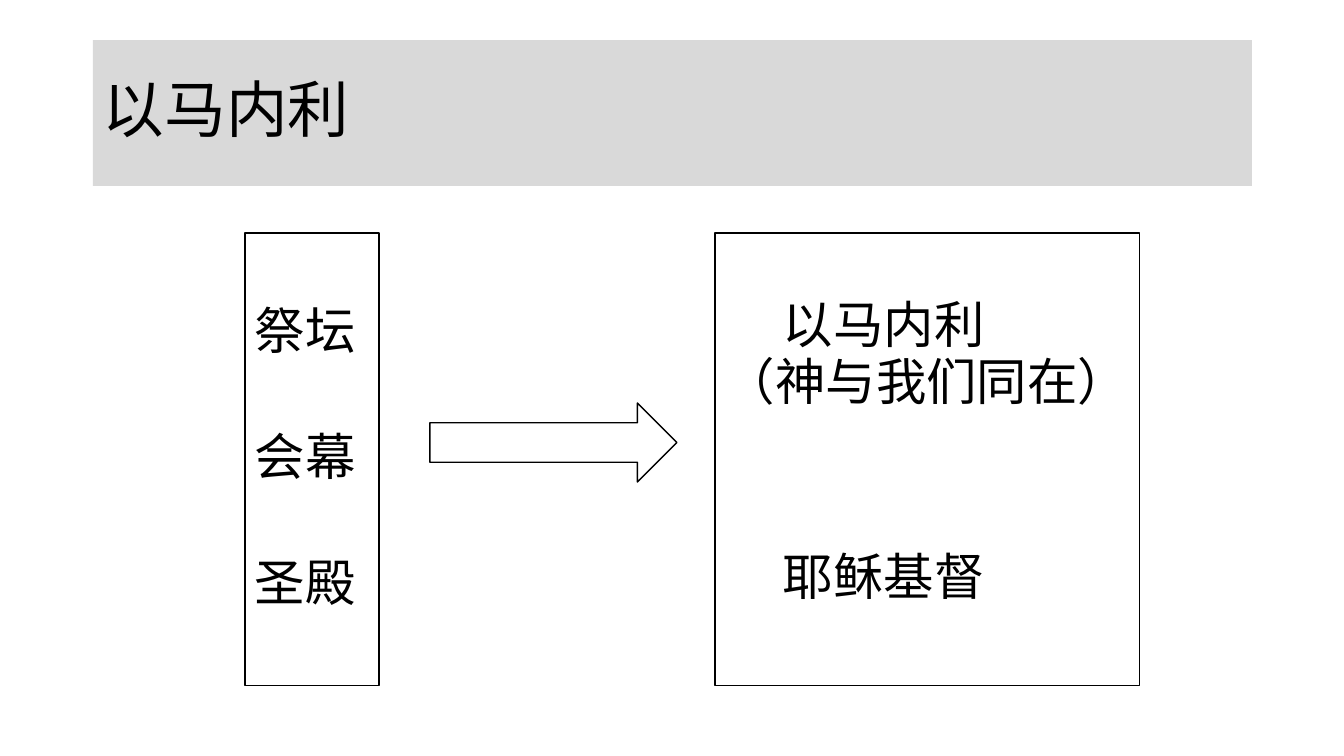
from pptx import Presentation
from pptx import util as u
from pptx.dml.color import RGBColor
from pptx.enum import shapes, text

PX = 914400 / 100.8
FONT = "Noto Sans CJK SC"
HUES = {"ink": "000000", "band": "D9D9D9", "white": "FFFFFF"}


def px(n):
    """Turn pixels into EMU."""
    return u.Emu(round(n * PX))


def hue(name):
    """Look up a colour."""
    return RGBColor.from_string(HUES[name])


def block(slide, kind, area, fill=None, line=None):
    """Add a preset shape with an optional fill and outline."""
    shape = slide.shapes.add_shape(kind, *map(px, area))
    shape.shadow.inherit = False
    if fill:
        shape.fill.solid()
        shape.fill.fore_color.rgb = hue(fill)
    else:
        shape.fill.background()
    if line:
        shape.line.color.rgb = hue("ink")
        shape.line.width = u.Pt(line)
    else:
        shape.line.fill.background()
    return shape


def write(shape, rows, size, top=5, anchor=text.MSO_ANCHOR.TOP):
    """Write rows of (words, space before in pt, indent in px)."""
    frame = shape.text_frame
    frame.word_wrap = True
    frame.vertical_anchor = anchor
    frame.margin_top = px(top)
    for i, (words, gap, indent) in enumerate(rows):
        para = frame.add_paragraph() if i else frame.paragraphs[0]
        para.alignment = text.PP_ALIGN.LEFT
        para.line_spacing = 0.9
        para.space_before = u.Pt(gap)
        if indent:
            para._p.get_or_add_pPr().set("marL", str(px(indent)))
        run = para.add_run()
        run.text = words
        run.font.size = u.Pt(size)
        run.font.color.rgb = hue("ink")
        run.font.name = FONT
        east = run._r.get_or_add_rPr().makeelement(
            "{http://schemas.openxmlformats.org/drawingml/2006/main}ea",
            {"typeface": FONT})
        run.font._element.append(east)


def main():
    """Build the slide."""
    deck = Presentation()
    deck.slide_width, deck.slide_height = px(1344), px(756)
    slide = deck.slides.add_slide(deck.slide_layouts[6])
    kinds = shapes.MSO_SHAPE

    title = block(slide, kinds.RECTANGLE, (93, 40, 1159, 146), fill="band")
    write(title, [("以马内利", 0, 0)], 44, anchor=text.MSO_ANCHOR.MIDDLE)

    places = block(slide, kinds.RECTANGLE, (245, 233, 134, 453), line=0.75)
    write(places, [("祭坛", 0, 0), ("会幕", 51, 0), ("圣殿", 51, 0)], 36, top=73)

    christ = block(slide, kinds.RECTANGLE, (715, 233, 425, 453), line=0.75)
    write(christ, [("以马内利", 0, 58), ("（神与我们同在）", 2, 0),
                   ("耶稣基督", 100, 58)], 36, top=67)

    block(slide, kinds.RIGHT_ARROW, (430, 403, 247, 79), fill="white", line=1)
    deck.save("out.pptx")


if __name__ == "__main__":
    main()
